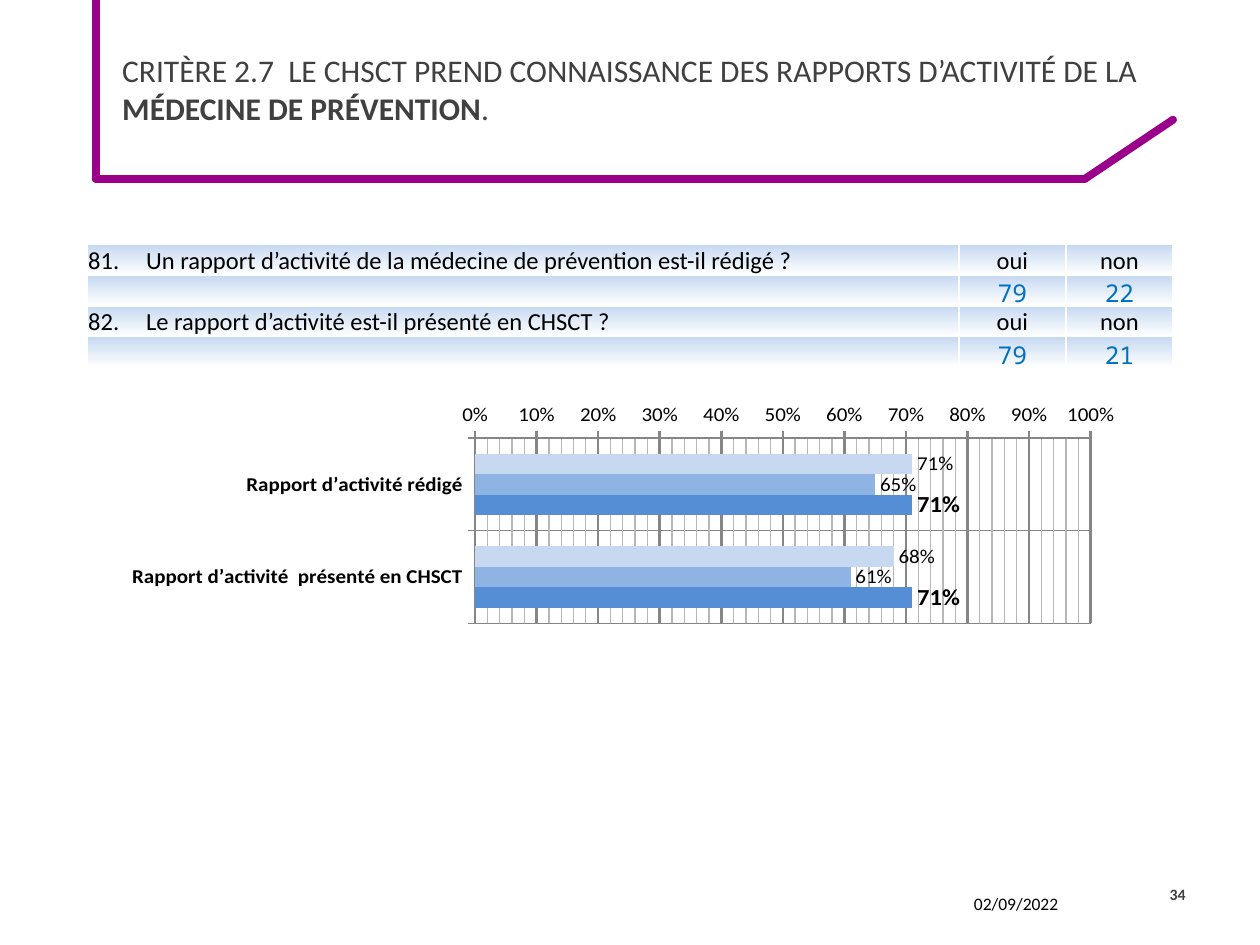
from lxml import etree
from pptx import Presentation
from pptx import util as u
from pptx.chart.data import CategoryChartData
from pptx.dml.color import RGBColor
from pptx.enum import chart as c
from pptx.enum import shapes, text
from pptx.oxml.ns import qn

PURPLE = RGBColor(0x9B, 0x00, 0x8A)
BLACK = RGBColor(0x00, 0x00, 0x00)
WHITE = RGBColor(0xFF, 0xFF, 0xFF)
CHARCOAL = RGBColor(0x40, 0x40, 0x40)
GRAY = RGBColor(0x86, 0x86, 0x86)
LIGHT_GRAY = RGBColor(0xB7, 0xB7, 0xB7)
PALE_BLUE = RGBColor(0xC6, 0xD9, 0xF1)
MID_BLUE = RGBColor(0x8E, 0xB4, 0xE3)
STRONG_BLUE = RGBColor(0x55, 0x8E, 0xD5)
ANSWER_BLUE = RGBColor(0x00, 0x70, 0xC0)

COLUMNS, ROWS = 100, 75
LEFT, CENTER, RIGHT = text.PP_ALIGN.LEFT, text.PP_ALIGN.CENTER, text.PP_ALIGN.RIGHT


def add_element(parent, tag, **attributes):
    return etree.SubElement(parent, qn(tag), **attributes)


def add_solid_line(parent, tag, color, width):
    line = add_element(parent, tag, w=str(u.Pt(width)))
    add_element(add_element(line, "a:solidFill"), "a:srgbClr", val=str(color))


class SlideBuilder:
    """Places elements on a grid of 100 columns by 75 rows."""

    font = "Calibri"
    number_font = "Noto Sans Mono"

    def __init__(self, presentation):
        self.column = presentation.slide_width / COLUMNS
        self.row = presentation.slide_height / ROWS
        self.slide = presentation.slides.add_slide(presentation.slide_layouts[6])

    def x(self, columns):
        return u.Emu(round(columns * self.column))

    def y(self, rows):
        return u.Emu(round(rows * self.row))

    def box(self, left, top, width, height):
        return self.x(left), self.y(top), self.x(width), self.y(height)

    def style(self, font, size, color, bold=False, name=None):
        font.name = name or self.font
        font.size = u.Pt(size)
        font.bold = bold
        font.color.rgb = color

    def line(self, x1, y1, x2, y2):
        connector = self.slide.shapes.add_connector(
            shapes.MSO_CONNECTOR.STRAIGHT, self.x(x1), self.y(y1), self.x(x2), self.y(y2))
        connector.line.color.rgb = PURPLE
        connector.line.width = u.Pt(4.5)
        connector.line._get_or_add_ln().set("cap", "rnd")
        add_element(connector._element.spPr, "a:effectLst")

    def textbox(self, box, runs, size, color, align=LEFT, spacing=None):
        """Add one paragraph; runs are (text, bold) pairs."""
        frame = self.slide.shapes.add_textbox(*self.box(*box)).text_frame
        frame.word_wrap = True
        frame.vertical_anchor = text.MSO_ANCHOR.MIDDLE
        frame.margin_left = frame.margin_right = u.Inches(0.09)
        frame.margin_top = frame.margin_bottom = u.Inches(0.04)
        paragraph = frame.paragraphs[0]
        paragraph.alignment = align
        if spacing:
            paragraph.line_spacing = u.Pt(spacing)
        for words, bold in runs:
            run = paragraph.add_run()
            run.text = words
            self.style(run.font, size, color, bold)

    def cell(self, cell, words, size=14, tab=4.6):
        cell.margin_left = cell.margin_right = cell.margin_top = u.Inches(0.01)
        cell.margin_bottom = 0
        cell.vertical_anchor = text.MSO_ANCHOR.MIDDLE
        properties = cell._tc.get_or_add_tcPr()
        for side in ("a:lnL", "a:lnR", "a:lnT", "a:lnB"):
            add_solid_line(properties, side, WHITE, 1)
        cell.fill.gradient()
        cell.fill.gradient_angle = 270
        for stop, color in zip(cell.fill.gradient_stops, (PALE_BLUE, WHITE)):
            stop.color.rgb = color

        paragraph = cell.text_frame.paragraphs[0]
        if not words:
            add_element(paragraph._p, "a:endParaRPr", sz=str(size * 100))
            return
        if "\t" in words:
            tabs = add_element(paragraph._p.get_or_add_pPr(), "a:tabLst")
            add_element(tabs, "a:tab", pos=str(self.x(tab)), algn="l")
        else:
            paragraph.alignment = CENTER
        run = paragraph.add_run()
        run.text = words
        if words.isdigit():
            self.style(run.font, size, ANSWER_BLUE, name=self.number_font)
        else:
            self.style(run.font, size, BLACK)

    def table(self, box, widths, heights, rows):
        table = self.slide.shapes.add_table(len(rows), len(widths), *self.box(*box)).table
        for column, width in zip(table.columns, widths):
            column.width = self.x(width)
        for row, height, words in zip(table.rows, heights, rows):
            row.height = self.y(height)
            for cell, value in zip(row.cells, words):
                self.cell(cell, value)

    def chart_line(self, line_format, color, width):
        line_format.color.rgb = color
        line_format.width = u.Pt(width)

    def bar_chart(self, box, plot_area, categories, series_styles):
        """series_styles are (values, color, label size, label bold)."""
        data = CategoryChartData(number_format="0%")
        data.categories = categories
        for number, (values, *_) in enumerate(series_styles, 1):
            data.add_series(f"Series {number}", values)
        chart = self.slide.shapes.add_chart(
            c.XL_CHART_TYPE.BAR_CLUSTERED, *self.box(*box), data).chart
        chart.has_legend = chart.has_title = False
        self.style(chart.font, 18, BLACK)

        plot = chart.plots[0]
        plot.gap_width, plot.overlap = 150, 0
        plot.vary_by_categories = False
        for series, (_, color, size, bold) in zip(plot.series, series_styles):
            series.format.fill.solid()
            series.format.fill.fore_color.rgb = color
            labels = series.data_labels
            labels.show_value = True
            labels.position = c.XL_LABEL_POSITION.OUTSIDE_END
            labels.number_format, labels.number_format_is_linked = "0%", False
            self.style(labels.font, size, BLACK, bold)

        category_axis, value_axis = chart.category_axis, chart.value_axis
        category_axis.reverse_order = True
        category_axis.major_tick_mark = c.XL_TICK_MARK.OUTSIDE
        value_axis.major_tick_mark = c.XL_TICK_MARK.CROSS
        value_axis.minimum_scale, value_axis.maximum_scale = 0, 1
        value_axis.major_unit, value_axis.minor_unit = 0.1, 0.02
        value_axis.tick_labels.number_format = "0%"
        value_axis.tick_labels.number_format_is_linked = False
        value_axis.has_minor_gridlines = True
        minor_gridlines = value_axis._element.find(qn("c:minorGridlines"))
        add_solid_line(add_element(minor_gridlines, "c:spPr"), "a:ln", LIGHT_GRAY, 0.75)
        for axis, bold, width in ((category_axis, True, 0.75), (value_axis, False, 1.5)):
            self.style(axis.tick_labels.font, 12, BLACK, bold)
            axis.has_major_gridlines = True
            self.chart_line(axis.major_gridlines.format.line, GRAY, width)
            self.chart_line(axis.format.line, GRAY, width)
        self.place_plot(chart, plot_area)

    def place_plot(self, chart, plot_area):
        """Fix the inner plot area, given as shares of the chart."""
        area = chart._chartSpace.chart.plotArea
        for old in area.findall(qn("c:layout")):
            area.remove(old)
        layout = etree.Element(qn("c:layout"))
        area.insert(0, layout)
        manual = add_element(layout, "c:manualLayout")
        add_element(manual, "c:layoutTarget", val="inner")
        for tag in ("c:xMode", "c:yMode"):
            add_element(manual, tag, val="edge")
        for tag, share in zip(("c:x", "c:y", "c:w", "c:h"), plot_area):
            add_element(manual, tag, val=str(share))


def main():
    presentation = Presentation()
    presentation.slide_width, presentation.slide_height = u.Inches(10), u.Inches(7.5)
    builder = SlideBuilder(presentation)

    frame_points = [(7.6, 0), (7.6, 14.2), (86.1, 14.2), (93.1, 9.5)]
    for start, end in zip(frame_points, frame_points[1:]):
        builder.line(*start, *end)

    builder.textbox((76.4, 69.7, 12.7, 4), [("02/09/2022", False)], 10, BLACK, spacing=11.8)
    builder.textbox((8.8, 0, 86.2, 14.1), [
        ("CRITÈRE 2.7  LE CHSCT PREND CONNAISSANCE DES RAPPORTS D’ACTIVITÉ DE LA ", False),
        ("MÉDECINE DE PRÉVENTION", True),
        (".", False)], 18, CHARCOAL)
    builder.bar_chart(
        (-4.3, 32, 97.7, 19.7), (0.43, 0.08, 0.5, 0.8),
        ["Rapport d’activité rédigé", "Rapport d’activité  présenté en CHSCT"],
        [((0.71, 0.68), PALE_BLUE, 12, False),
         ((0.65, 0.61), MID_BLUE, 12, False),
         ((0.71, 0.71), STRONG_BLUE, 14, True)])
    builder.textbox((90.1, 69, 4.9, 4), [("34", True)], 9, CHARCOAL, RIGHT)
    builder.table((6.9, 19.4, 86.2, 9.7), (69.2, 8.5, 8.5), (2.4, 2.4) * 2, [
        ("81.\tUn rapport d’activité de la médecine de prévention est-il rédigé ?", "oui", "non"),
        ("", "79", "22"),
        ("82.\tLe rapport d’activité est-il présenté en CHSCT ?", "oui", "non"),
        ("", "79", "21")])
    presentation.save("out.pptx")


if __name__ == "__main__":
    main()
